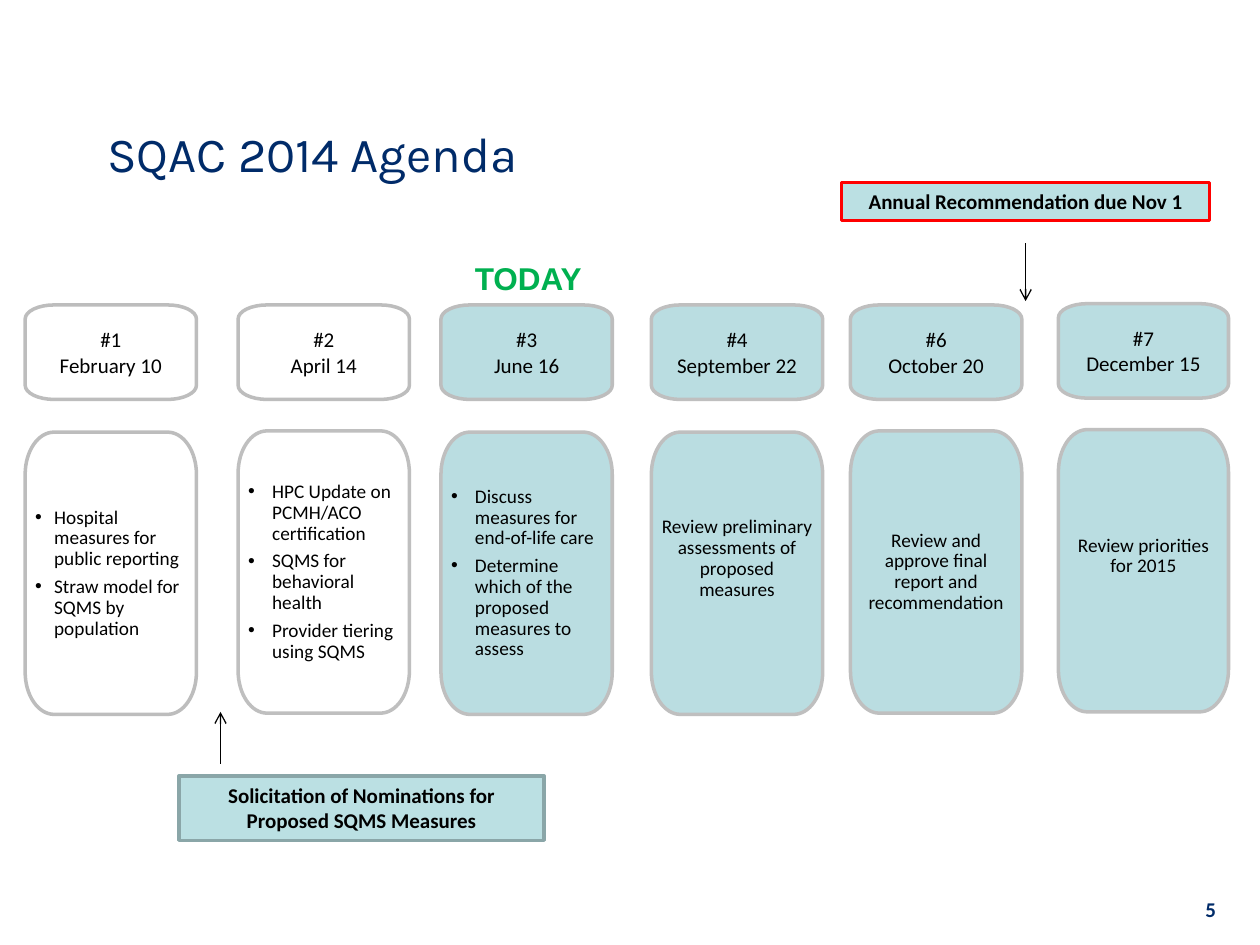
import math
from pptx import Presentation
from pptx.util import Inches, Pt
from pptx.dml.color import RGBColor
from pptx.enum import shapes as sh, text as tx
from pptx.oxml.ns import qn
from lxml import etree

HUES = {"navy": "002B69", "black": "000000", "green": "00B050", "red": "FF0000",
        "pale": "BADDE1", "note": "BBE0E3", "teal": "8AA6A8",
        "gray": "BFBFBF", "ash": "BDBDBD"}
MID, LEFT, RIGHT = tx.PP_ALIGN.CENTER, tx.PP_ALIGN.LEFT, tx.PP_ALIGN.RIGHT


def write(shape, lines, size, align=MID, hue="black", bold=False, face="Calibri",
          wrap=True, anchor=tx.MSO_ANCHOR.MIDDLE):
    """Put one paragraph per line into the shape and return the text frame."""
    frame = shape.text_frame
    frame.word_wrap = wrap
    frame.vertical_anchor = anchor
    for i, line in enumerate(lines):
        para = frame.paragraphs[0] if i == 0 else frame.add_paragraph()
        para.alignment = align
        run = para.add_run()
        run.text = line
        run.font.size = Pt(size)
        run.font.name = face
        run.font.bold = bold
        run.font.color.rgb = RGBColor.from_string(HUES[hue])
    return frame


def card(left, top, wide, high, fill, line):
    """Draw a box with elliptical corners, each made of two Bezier curves."""
    rx, ry = 0.23, 0.15 * high
    bend = 4 / 3 * math.tan(math.pi / 16)
    spots = [(rx, ry), (wide - rx, ry), (wide - rx, high - ry), (rx, high - ry)]
    points, curves = [], {}
    for turn, (cx, cy) in enumerate(spots):
        for step in range(3):
            angle = math.radians(180 + 90 * turn + 45 * step)
            x, y = rx * math.cos(angle), ry * math.sin(angle)
            dx, dy = -bend * rx * math.sin(angle), bend * ry * math.cos(angle)
            if step:
                curves[len(points)] = [ahead, (cx + x - dx, cy + y - dy)]
            ahead = (cx + x + dx, cy + y + dy)
            points.append((Inches(left + cx + x), Inches(top + cy + y)))
    draft = slide.shapes.build_freeform(*points[0])
    draft.add_line_segments(points[1:] + points[:1], close=True)
    box = draft.convert_to_shape()
    edges = list(box._element.iter(qn("a:lnTo")))
    for i, pulls in curves.items():
        edge = edges[i - 1]
        edge.tag = qn("a:cubicBezTo")
        for spot, (x, y) in enumerate(pulls):
            pull = etree.Element(qn("a:pt"), x=str(Inches(x)), y=str(Inches(y)))
            edge.insert(spot, pull)
    box.shadow.inherit = False
    if fill:
        box.fill.solid()
        box.fill.fore_color.rgb = RGBColor.from_string(HUES[fill])
    else:
        box.fill.background()
    box.line.color.rgb = RGBColor.from_string(HUES[line])
    box.line.width = Pt(2)
    frame = box.text_frame
    frame.margin_left = frame.margin_right = Inches(0.08)
    frame.margin_top = frame.margin_bottom = Inches(0.08)
    return box


deck = Presentation()
deck.slide_width, deck.slide_height = Inches(10), Inches(7.5)
slide = deck.slides.add_slide(deck.slide_layouts[5])

title = slide.shapes.title
title.left, title.top = Inches(0.75), Inches(0.67)
title.width, title.height = Inches(8.5), Inches(1.08)
write(title, ["SQAC 2014 Agenda"], 28, LEFT, "navy", face="Karla")

# left, width, top of date, top of topic, fill, date line, topic line,
# number, date, bullet indent, extra space below the topic, topics
meets = [
    (0.2, 1.36, 2.42, 3.43, None, "ash", "ash", "#1", "February 10", 0.15, 0,
     ["Hospital measures for public reporting", "Straw model for SQMS by population"]),
    (1.89, 1.36, 2.42, 3.42, None, "ash", "gray", "#2", "April 14", 0.19, 0,
     ["HPC Update on PCMH/ACO certification", "SQMS for behavioral health",
      "Provider tiering using SQMS"]),
    (3.5, 1.36, 2.42, 3.43, "pale", "ash", "gray", "#3", "June 16", 0.19, 0,
     ["Discuss measures for end-of-life care",
      "Determine which of the proposed measures to assess"]),
    (5.17, 1.36, 2.42, 3.43, "pale", "gray", "gray", "#4", "September 22", 0, 0.23,
     ["Review preliminary assessments of proposed measures"]),
    (6.75, 1.36, 2.42, 3.42, "pale", "gray", "gray", "#6", "October 20", 0, 0,
     ["Review and approve final report and recommendation"]),
    (8.4, 1.35, 2.41, 3.41, "pale", "gray", "gray", "#7", "December 15", 0, 0.23,
     ["Review priorities for 2015"]),
]
for left, wide, high, low, fill, edge, rim, num, date, dent, lift, topics in meets:
    write(card(left, high, wide, 0.75, fill, edge), [num, date], 12)
    frame = write(card(left, low, wide, 2.24, fill, rim), topics, 11,
                  LEFT if dent else MID)
    frame.margin_bottom = Inches(0.08 + lift)
    for para in frame.paragraphs:
        para.line_spacing = 0.9
        para.space_after = Pt(4)
        if dent:
            props = para._p.get_or_add_pPr()
            props.set("marL", str(Inches(dent)))
            props.set("indent", str(-Inches(dent)))
            etree.SubElement(props, qn("a:buFont")).set("typeface", "Arial")
            etree.SubElement(props, qn("a:buChar")).set("char", "•")

notes = [
    (6.68, 1.45, 2.92, 0.3, "red", "Annual Recommendation due Nov 1"),
    (1.42, 6.16, 2.9, 0.51, "teal",
     "Solicitation of Nominations for Proposed SQMS Measures"),
]
for left, top, wide, high, edge, words in notes:
    note = slide.shapes.add_shape(sh.MSO_SHAPE.RECTANGLE, Inches(left), Inches(top),
                                  Inches(wide), Inches(high))
    note.shadow.inherit = False
    note.fill.solid()
    note.fill.fore_color.rgb = RGBColor.from_string(HUES["note"])
    note.line.color.rgb = RGBColor.from_string(HUES[edge])
    note.line.width = Pt(2)
    frame = write(note, [words], 12, bold=True, anchor=tx.MSO_ANCHOR.TOP)
    frame.auto_size = tx.MSO_AUTO_SIZE.SHAPE_TO_FIT_TEXT

for x, start, end in [(8.14, 1.93, 2.39), (1.75, 6.06, 5.65)]:
    arrow = slide.shapes.add_connector(sh.MSO_CONNECTOR.STRAIGHT, Inches(x),
                                       Inches(start), Inches(x), Inches(end))
    arrow.line.color.rgb = RGBColor.from_string(HUES["black"])
    arrow.line.width = Pt(0.75)
    etree.SubElement(arrow.line._get_or_add_ln(), qn("a:tailEnd")).set("type", "arrow")
    etree.SubElement(arrow._element.spPr, qn("a:effectLst"))

today = slide.shapes.add_textbox(Inches(3.67), Inches(2.01), Inches(1.05), Inches(0.4))
frame = write(today, ["TODAY"], 18, LEFT, "green", True, "Arial", False,
              tx.MSO_ANCHOR.TOP)
frame.auto_size = tx.MSO_AUTO_SIZE.SHAPE_TO_FIT_TEXT

page = slide.shapes.add_textbox(Inches(7.67), Inches(7.08), Inches(2.08), Inches(0.27))
write(page, ["5"], 12, RIGHT, "navy", True)

deck.save("out.pptx")
